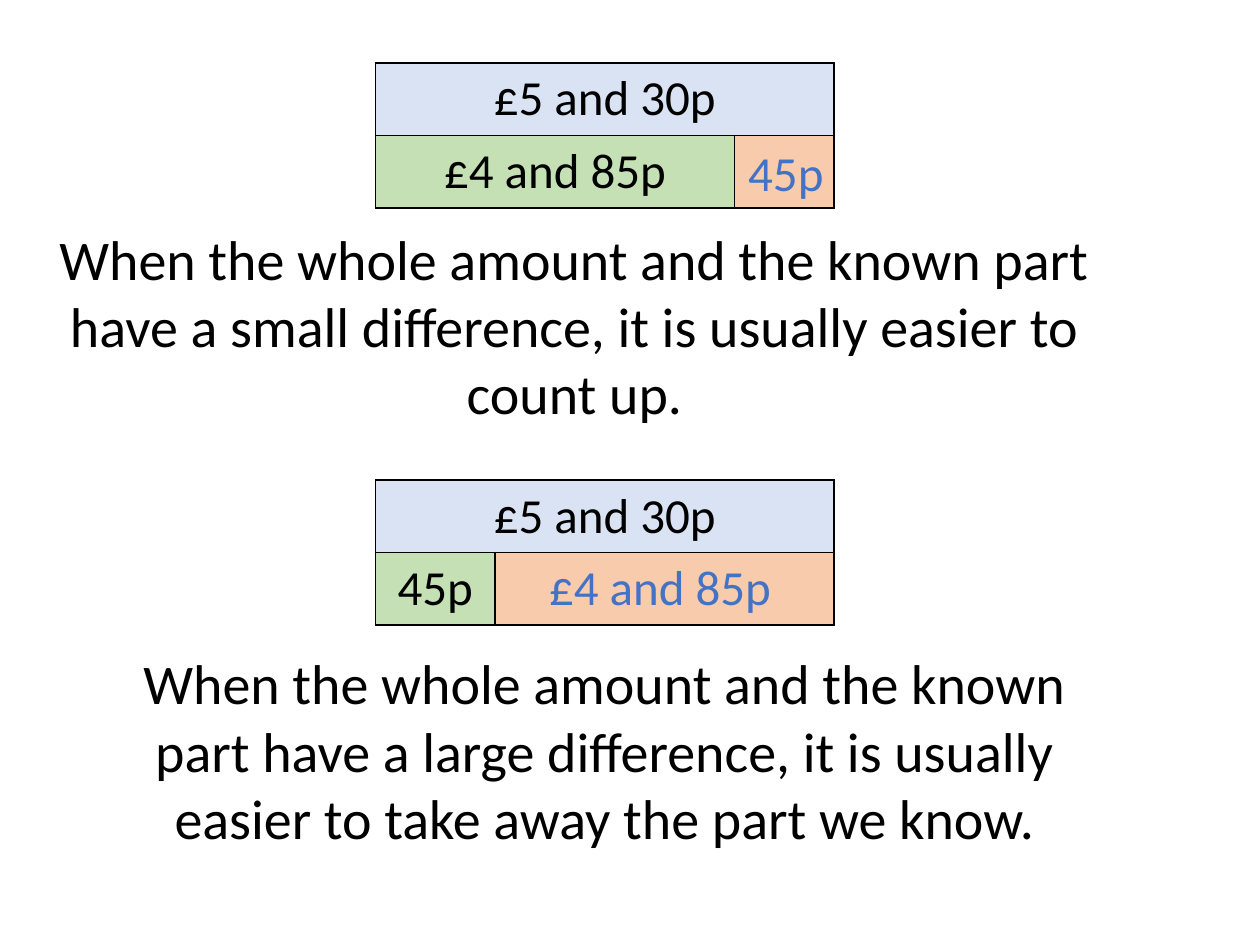
from lxml import etree
from pptx import Presentation
from pptx.dml.color import RGBColor
from pptx.enum.text import MSO_ANCHOR, PP_ALIGN
from pptx.oxml.ns import qn
from pptx.util import Inches, Pt

CENTER, LEFT = PP_ALIGN.CENTER, PP_ALIGN.LEFT
MIDDLE = MSO_ANCHOR.MIDDLE
COLORS = {"text": "000000", "answer": "4472C4", "border": "000000",
          "whole": "DAE3F3", "known": "C5E0B4", "unknown": "F8CBAD"}
BAR_LEFT, BAR_WIDTH, ROW_HEIGHT = 2.98, 3.64, 0.57


def write_text(text_frame, text, size=28, color="text", align=CENTER):
    text_frame.word_wrap = True
    paragraph = text_frame.paragraphs[0]
    paragraph.alignment = align
    run = paragraph.add_run()
    run.text = text
    run.font.name = "Calibri"
    run.font.size = Pt(size)
    run.font.color.rgb = RGBColor.from_string(COLORS[color])


def style_cell(cell, fill):
    properties = cell._tc.get_or_add_tcPr()
    for side in ("lnL", "lnR", "lnT", "lnB"):
        line = etree.SubElement(properties, qn(f"a:{side}"), w=str(Pt(1)))
        solid = etree.SubElement(line, qn("a:solidFill"))
        etree.SubElement(solid, qn("a:srgbClr"), val=COLORS["border"])
    cell.fill.solid()
    cell.fill.fore_color.rgb = RGBColor.from_string(COLORS[fill])
    cell.vertical_anchor = MIDDLE


presentation = Presentation()
presentation.slide_width, presentation.slide_height = Inches(10), Inches(7.5)
slide = presentation.slides.add_slide(presentation.slide_layouts[6])

# Bar models: top, width of the known part, label of the known part
for top, known_width, known in ((0.5, 2.85, "£4 and 85p"), (3.81, 0.95, "45p")):
    table = slide.shapes.add_table(
        2, 2, Inches(BAR_LEFT), Inches(top),
        Inches(BAR_WIDTH), Inches(2 * ROW_HEIGHT)).table
    table.first_row = table.horz_banding = False
    table.columns[0].width = Inches(known_width)
    table.columns[1].width = Inches(BAR_WIDTH - known_width)
    for row, fills in enumerate((("whole", "whole"), ("known", "unknown"))):
        table.rows[row].height = Inches(ROW_HEIGHT)
        for column, fill in enumerate(fills):
            style_cell(table.cell(row, column), fill)
    table.cell(0, 0).merge(table.cell(0, 1))
    write_text(table.cell(0, 0).text_frame, "£5 and 30p")
    write_text(table.cell(1, 0).text_frame, known)

# Explanations and answers: left, top, width, height, text, format
explanation = {"size": 32}
answer = {"color": "answer", "align": LEFT}
text_boxes = (
    (0.11, 1.73, 8.9, 1.72, "When the whole amount and the known part have a small "
     "difference, it is usually easier to count up.", explanation),
    (0.85, 5.1, 7.9, 1.72, "When the whole amount and the known part have a large "
     "difference, it is usually easier to take away the part we know.", explanation),
    (5.84, 1.08, 1, ROW_HEIGHT, "45p", answer),
    (4.26, 4.37, 2.26, ROW_HEIGHT, "£4 and 85p", answer),
)
for left, top, width, height, text, text_format in text_boxes:
    text_box = slide.shapes.add_textbox(
        Inches(left), Inches(top), Inches(width), Inches(height))
    write_text(text_box.text_frame, text, **text_format)

presentation.save("out.pptx")
